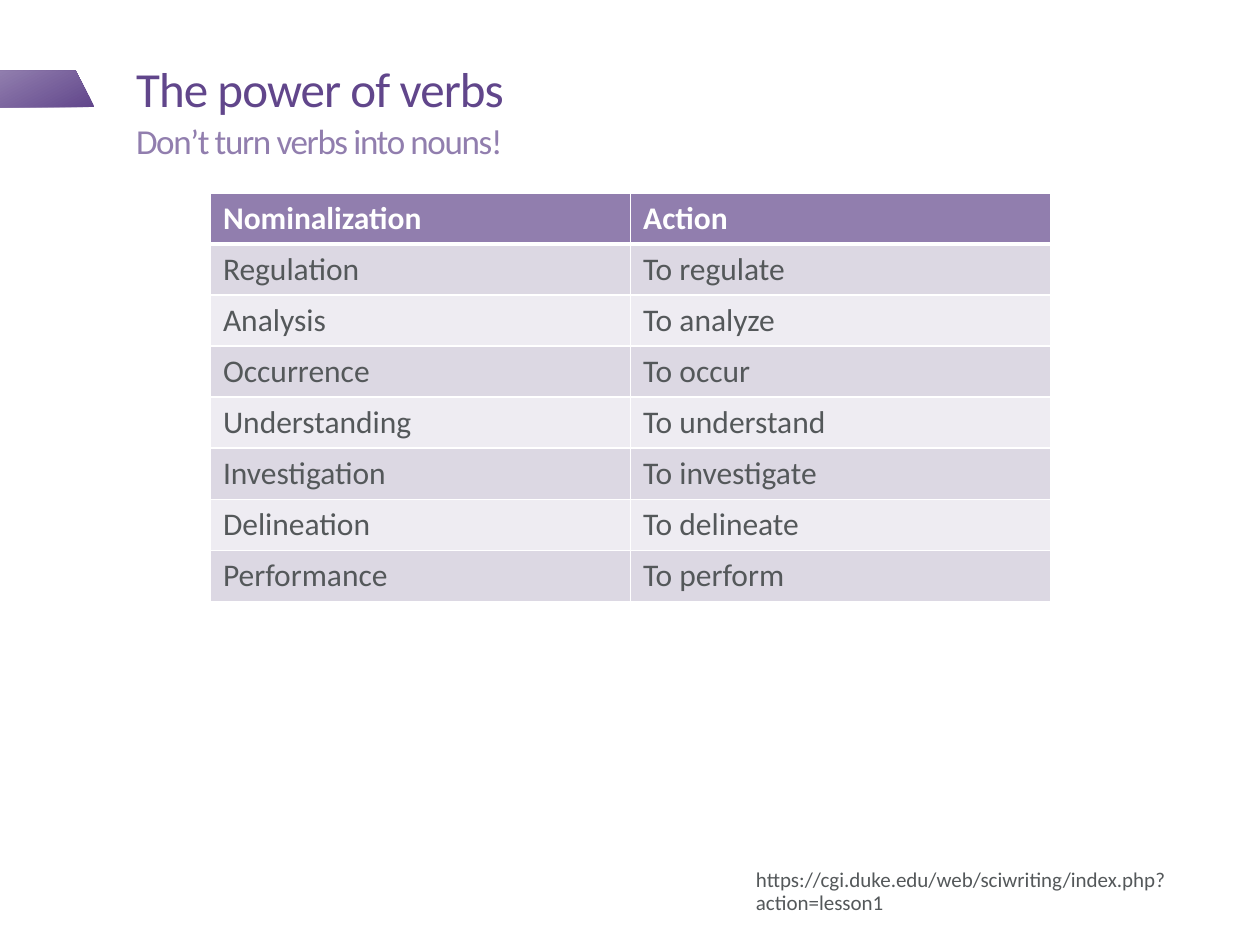
"""Builds a slide that pairs nominalizations with their verbs."""
from lxml.etree import SubElement
from pptx import Presentation
from pptx.dml.color import RGBColor
from pptx.enum.text import MSO_ANCHOR as Anchor, MSO_AUTO_SIZE as AutoSize, PP_ALIGN as Align
from pptx.oxml import parse_xml
from pptx.oxml.ns import nsdecls, qn
from pptx.util import Inches, Pt

TITLE = "The power of verbs"
SUBTITLE = "Don’t turn verbs into nouns!"
SOURCE = "https://cgi.duke.edu/web/sciwriting/index.php?action=lesson1"
VERBS = [
    ("Nominalization", "Action"),
    ("Regulation", "To regulate"),
    ("Analysis", "To analyze"),
    ("Occurrence", "To occur"),
    ("Understanding", "To understand"),
    ("Investigation", "To investigate"),
    ("Delineation", "To delineate"),
    ("Performance", "To perform"),
]
TAB_OUTLINE = [(0, 0.56), (0.6, 0.56), (0.75, 0.85), (0, 0.85)]
THEME = {
    "font": "Calibri",
    "dark": "61468B", "accent": "917EAE", "text": "54585A", "white": "FFFFFF",
    "bands": ("EEECF2", "DCD8E3"),
    "title": 28, "subtitle": 20, "table": 18, "source": 12,
    "rule": 1, "header_rule": 3,
}


def rgb(name):
    return RGBColor.from_string(THEME.get(name, name))


def write(frame, text, *, size, color, bold=False, spacing=None, leading=None):
    frame.word_wrap = True
    line = frame.paragraphs[0]
    line.alignment = Align.LEFT
    line.space_before = Pt(0)
    if leading:
        line.line_spacing = leading
    run = line.add_run()
    run.text = text
    font = run.font
    font.name, font.size, font.bold = THEME["font"], Pt(THEME[size]), bold
    font.color.rgb = rgb(color)
    if spacing is not None:
        font._element.set("spc", str(round(spacing * 100)))


def place(shape, left, top, width, height, anchor, insets):
    shape.left, shape.top = Inches(left), Inches(top)
    shape.width, shape.height = Inches(width), Inches(height)
    frame = shape.text_frame
    frame.auto_size = AutoSize.NONE
    frame.vertical_anchor = anchor
    frame.margin_left = frame.margin_top = 0
    frame.margin_right, frame.margin_bottom = map(Inches, insets)
    return frame


def remove_bullet(frame):
    properties = frame.paragraphs[0]._p.get_or_add_pPr()
    properties.set("marL", "0")
    properties.set("indent", "0")
    SubElement(properties, qn("a:buNone"))


def set_borders(cell, **widths):
    for index, (side, width) in enumerate(widths.items()):
        cell._tc.get_or_add_tcPr().insert(index, parse_xml(
            f'<a:ln{side} {nsdecls("a")} w="{Pt(width)}"><a:solidFill>'
            f'<a:srgbClr val="{THEME["white"]}"/></a:solidFill></a:ln{side}>'))


def add_tab(slide):
    start, *others = [(Inches(x), Inches(y)) for x, y in TAB_OUTLINE]
    builder = slide.shapes.build_freeform(*start)
    builder.add_line_segments(others, close=True)
    tab = builder.convert_to_shape()
    tab.shadow.inherit = False
    tab.line.fill.background()
    tab.fill.gradient()
    tab.fill.gradient_angle = 118
    for stop, color in zip(tab.fill.gradient_stops, ("dark", "accent")):
        stop.color.rgb = rgb(color)


def add_verb_table(slide):
    table = slide.shapes.add_table(len(VERBS), 2, Inches(1.67), Inches(1.53),
                                   Inches(6.67), Inches(3.24)).table
    thin, thick = THEME["rule"], THEME["header_rule"]
    for row, pair in enumerate(VERBS):
        header = row == 0
        for column, word in enumerate(pair):
            cell = table.cell(row, column)
            cell.fill.solid()
            cell.fill.fore_color.rgb = rgb("accent" if header else THEME["bands"][row % 2])
            set_borders(cell, L=thin, R=thin, T=thick if row == 1 else thin,
                        B=thick if header else thin)
            write(cell.text_frame, word, size="table",
                  color="white" if header else "text", bold=header)


def main():
    deck = Presentation()
    deck.slide_width, deck.slide_height = Inches(10), Inches(7.5)
    slide = deck.slides.add_slide(deck.slide_layouts[1])
    add_tab(slide)

    title = place(slide.shapes.title, 1.08, 0.15, 8.44, 0.83, Anchor.BOTTOM, (0.1, 0.05))
    write(title, TITLE, size="title", color="dark", spacing=-0.5, leading=0.85)

    subtitle = place(slide.placeholders[1], 1.08, 1, 7.5, 0.5, Anchor.TOP, (0.1, 0.05))
    remove_bullet(subtitle)
    write(subtitle, SUBTITLE, size="subtitle", color="accent", spacing=-0.8, leading=0.85)

    add_verb_table(slide)

    source = place(slide.shapes.add_textbox(0, 0, 0, 0), 6, 6.9, 4, 0.58, Anchor.TOP, (0, 0))
    write(source, SOURCE, size="source", color="text", leading=0.9)
    deck.save("out.pptx")


if __name__ == "__main__":
    main()
